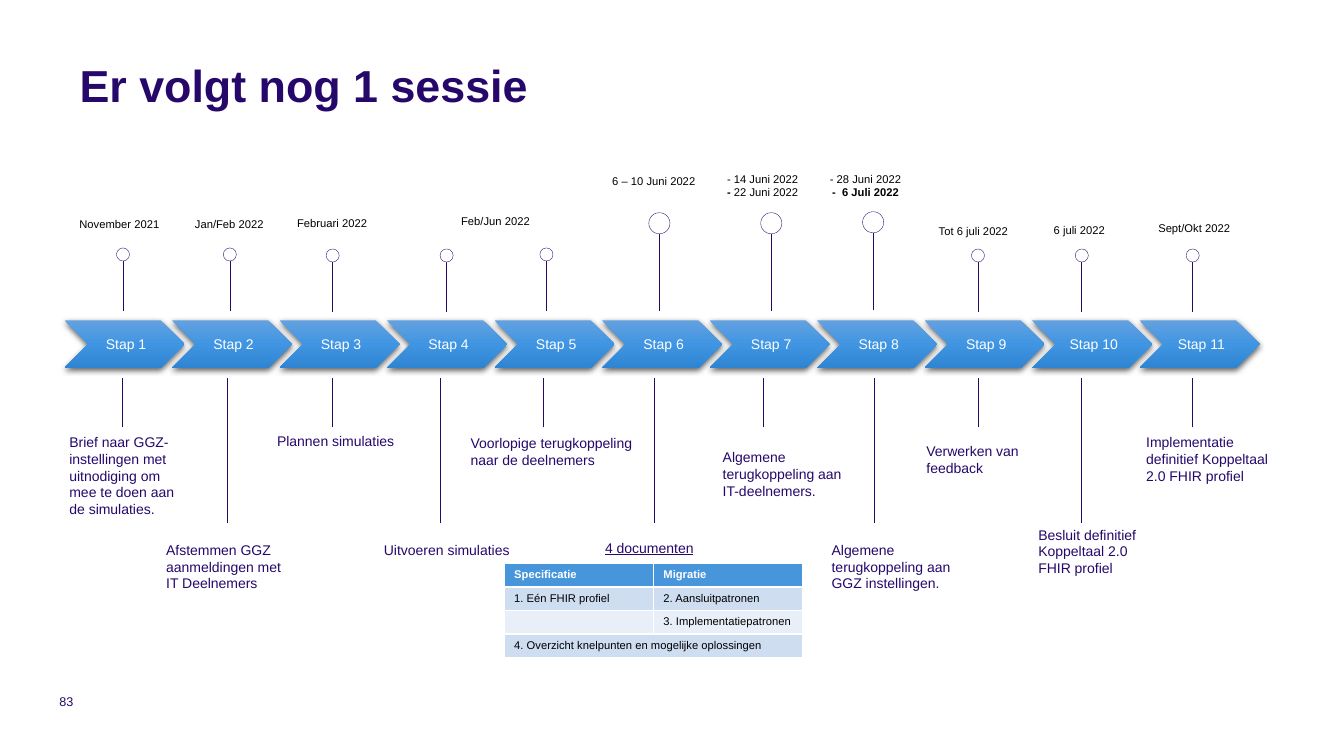
from lxml import etree
from pptx import Presentation, util as u
from pptx.dml.color import RGBColor
from pptx.enum import shapes, text
from pptx.oxml import parse_xml
from pptx.oxml.ns import nsdecls, qn

INDIGO = RGBColor(0x26, 0x08, 0x6B)
BLACK = RGBColor(0x00, 0x00, 0x00)
WHITE = RGBColor(0xFF, 0xFF, 0xFF)
HEADER_BLUE = RGBColor(0x47, 0x95, 0xDB)
BAND_DARK = RGBColor(0xCF, 0xDD, 0xF1)
BAND_LIGHT = RGBColor(0xE9, 0xEF, 0xF8)
WIDTH, HEIGHT = 13.33, 7.5
LEFT, PITCH = 0.048 * WIDTH, 0.08 * WIDTH
CENTER = text.PP_ALIGN.CENTER

GRADIENT = f"""<a:gradFill {nsdecls('a')} rotWithShape="1"><a:gsLst>
<a:gs pos="0"><a:srgbClr val="63A1E0"/></a:gs>
<a:gs pos="50000"><a:srgbClr val="4095E2"/></a:gs>
<a:gs pos="100000"><a:srgbClr val="3085D2"/></a:gs>
</a:gsLst><a:lin ang="5400000" scaled="0"/></a:gradFill>"""
SHADOW = f"""<a:effectLst {nsdecls('a')}>
<a:outerShdw blurRad="57150" dist="19050" dir="5400000" algn="ctr" rotWithShape="0">
<a:srgbClr val="000000"><a:alpha val="63000"/></a:srgbClr></a:outerShdw></a:effectLst>"""


def write(frame, lines, size, color, align=None, margin=None):
    """Write one paragraph per line; text between asterisks is bold."""
    frame.word_wrap = True
    if margin is not None:
        frame.margin_left = frame.margin_right = u.Inches(margin)
        frame.margin_top = frame.margin_bottom = u.Inches(margin)
    for number, line in enumerate(lines):
        para = frame.add_paragraph() if number else frame.paragraphs[0]
        para.alignment = align
        para.font.name, para.font.size = "Arial", u.Pt(size)
        para.font.color.rgb = color
        for index, part in enumerate(line.split("*")):
            if part:
                span = para.add_run()
                span.text = part
                if index % 2:
                    span.font.bold = True


def add_stem(x, top, bottom):
    stem = page.shapes.add_connector(
        shapes.MSO_CONNECTOR.STRAIGHT, u.Inches(x), u.Inches(bottom), u.Inches(x), u.Inches(top))
    stem.line.color.rgb, stem.line.width = INDIGO, u.Pt(0.5)
    etree.SubElement(stem._element.spPr, qn("a:effectLst"))


deck = Presentation()
deck.slide_width, deck.slide_height = u.Inches(WIDTH), u.Inches(HEIGHT)
page = deck.slides.add_slide(deck.slide_layouts[6])

title = page.shapes.add_textbox(u.Inches(0.79), u.Inches(0.61), u.Inches(11.76), u.Inches(0.5))
write(title.text_frame, ["*Er volgt nog 1 sessie*"], 32, INDIGO, margin=0)
title.text_frame.paragraphs[0].line_spacing = u.Pt(36)
number_box = page.shapes.add_textbox(u.Inches(0.59), u.Inches(6.88), u.Inches(0.2), u.Inches(0.15))
write(number_box.text_frame, ["83"], 9, INDIGO, margin=0)

# Row of steps
for step in range(11):
    chevron = page.shapes.add_shape(
        shapes.MSO_SHAPE.CHEVRON, u.Inches(LEFT + step * PITCH), u.Inches(3.18),
        u.Inches(1.19), u.Inches(0.47))
    chevron.line.fill.background()
    properties = chevron._element.spPr
    properties.insert(2, parse_xml(GRADIENT))
    properties.append(parse_xml(SHADOW))
    write(chevron.text_frame, [f"Stap {step + 1}"], 10, WHITE, CENTER, margin=0.01)
    chevron.text_frame.margin_left = u.Inches(0.04)
    chevron.text_frame.vertical_anchor = text.MSO_ANCHOR.MIDDLE

# Pins above the steps: centre, top, diameter, total height
SMALL, LARGE = (0.13, 0.63), (0.21, 0.98)
pins = [
    (1.22, 2.46, SMALL), (2.28, 2.46, SMALL), (3.3, 2.47, SMALL), (4.43, 2.47, SMALL),
    (5.42, 2.46, SMALL), (6.54, 2.11, LARGE), (7.65, 2.11, LARGE), (8.66, 2.1, LARGE),
    (9.7, 2.47, SMALL), (10.73, 2.47, SMALL), (11.83, 2.47, SMALL),
]
for x, top, (diameter, reach) in pins:
    add_stem(x, top + diameter, top + reach)
    head = page.shapes.add_shape(
        shapes.MSO_SHAPE.OVAL, u.Inches(x - diameter / 2), u.Inches(top),
        u.Inches(diameter), u.Inches(diameter))
    head.shadow.inherit = False
    head.fill.solid()
    head.fill.fore_color.rgb = WHITE
    head.line.color.rgb, head.line.width = INDIGO, u.Pt(0.25)

# Stems below the steps, short and long in turn
for index, x in enumerate([1.21, 2.25, 3.3, 4.37, 5.39, 6.49, 7.57, 8.67, 9.7, 10.73, 11.83]):
    add_stem(x, 3.75, 5.19 if index % 2 else 4.24)

# Left, top, width, lines
dates = [
    (0.62, 2.11, 1.13, ["November 2021"]),
    (1.71, 2.11, 1.13, ["Jan/Feb 2022"]),
    (2.73, 2.1, 1.13, ["Februari 2022"]),
    (4.35, 2.08, 1.13, ["Feb/Jun 2022"]),
    (5.92, 1.68, 1.13, ["6 – 10 Juni 2022"]),
    (7, 1.66, 1.13, ["- 14 Juni 2022", "*- *22 Juni 2022"]),
    (8.02, 1.66, 1.13, ["- 28 Juni 2022", "*-  6 Juli 2022*"]),
    (9.09, 2.18, 1.13, ["Tot 6 juli 2022"]),
    (10.32, 2.17, 0.77, ["6 juli 2022"]),
    (11.38, 2.15, 0.93, ["Sept/Okt 2022"]),
]
for left, top, width, lines in dates:
    box = page.shapes.add_textbox(
        u.Inches(left), u.Inches(top), u.Inches(width), u.Inches(0.11 + 0.13 * len(lines)))
    write(box.text_frame, lines, 8, BLACK, CENTER)

# Left, top, width, rows of text, lines
actions = [
    (0.59, 4.25, 1.33, 5,
     ["Brief naar GGZ-instellingen met uitnodiging om mee te doen aan de simulaties."]),
    (1.55, 5.32, 1.43, 3, ["Afstemmen GGZ aanmeldingen met IT Deelnemers"]),
    (2.65, 4.24, 1.43, 1, ["Plannen simulaties"]),
    (3.71, 5.32, 1.47, 1, ["Uitvoeren simulaties"]),
    (4.57, 4.26, 1.83, 2, ["Voorlopige terugkoppeling naar de deelnemers"]),
    (7.07, 4.4, 1.44, 3, ["Algemene terugkoppeling aan IT-deelnemers."]),
    (8.15, 5.32, 1.44, 3, ["Algemene terugkoppeling aan GGZ instellingen."]),
    (9.09, 4.34, 1.44, 2, ["Verwerken van feedback"]),
    (10.2, 5.17, 1.44, 3, ["Besluit definitief", "Koppeltaal 2.0 FHIR profiel"]),
    (11.27, 4.25, 1.44, 3, ["Implementatie definitief Koppeltaal 2.0 FHIR profiel"]),
    (5.88, 5.3, 1.12, 1, ["4 documenten"]),
]
for left, top, width, rows, lines in actions:
    box = page.shapes.add_textbox(
        u.Inches(left), u.Inches(top), u.Inches(width), u.Inches(0.1 + 0.17 * rows))
    write(box.text_frame, lines, 10, INDIGO)
documents_heading = box.text_frame.paragraphs[0]
documents_heading.alignment = CENTER
documents_heading.runs[0].font.underline = True

# Table of documents
documents = [
    (HEADER_BLUE, WHITE, ["*Specificatie*", "*Migratie*"]),
    (BAND_DARK, BLACK, ["1. Eén FHIR profiel", "2. Aansluitpatronen"]),
    (BAND_LIGHT, BLACK, ["", "3. Implementatiepatronen"]),
    (BAND_DARK, BLACK, ["4. Overzicht knelpunten en mogelijke oplossingen", ""]),
]
table = page.shapes.add_table(
    4, 2, u.Inches(5), u.Inches(5.59), u.Inches(2.96), u.Inches(0.93)).table
table.cell(3, 0).merge(table.cell(3, 1))
for row, (fill, color, entries) in enumerate(documents):
    for column, entry in enumerate(entries):
        cell = table.cell(row, column)
        cell.fill.solid()
        cell.fill.fore_color.rgb = fill
        write(cell.text_frame, [entry], 8, color)
        if not entry:
            end = etree.SubElement(cell.text_frame.paragraphs[0]._p, qn("a:endParaRPr"))
            end.set("sz", "800")

deck.save("out.pptx")
